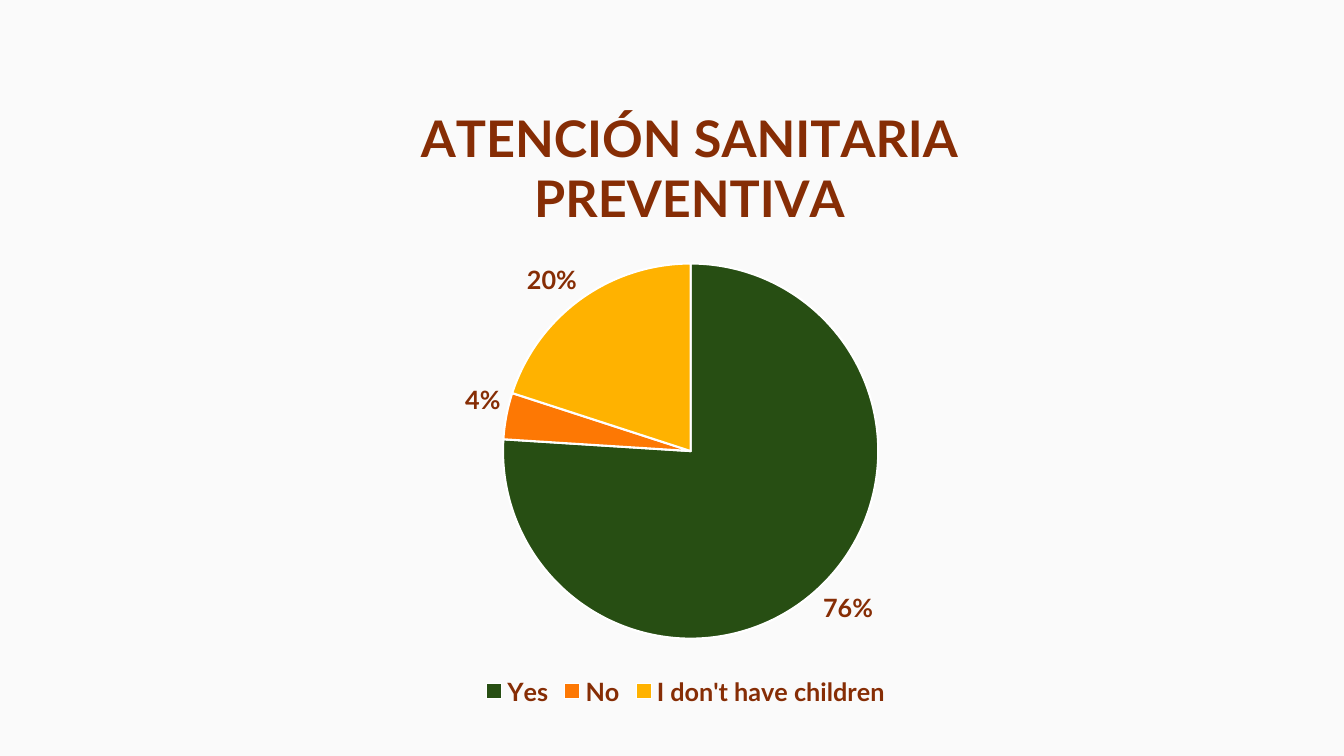
"""Build a slide with a pie chart on preventive health care."""
from lxml import etree
from pptx import Presentation
from pptx.chart.data import CategoryChartData
from pptx.dml.color import RGBColor
from pptx.enum import chart as ch
from pptx.oxml import ns
from pptx.util import Inches, Pt

COLORS = {"background": "FAFAFA", "text": "862D05", "border": "FFFFFF"}
HEADING = "ATENCIÓN SANITARIA PREVENTIVA"
ANSWERS = [
    ("Yes", 0.76, "274E13"),
    ("No", 0.04, "FD7804"),
    ("I don't have children", 0.2, "FFB200"),
]
FRAME = (1.77, 0.6, 10.06, 6.46)
HEADING_AT = {"x": 0.23, "y": 0.05}
PIE_AT = {"x": 0.32, "y": 0.31, "w": 0.37, "h": 0.58}


def rgb(value):
    return RGBColor.from_string(value)


def style(font, size, name="Lato", bold=True):
    for key, value in {"size": Pt(size), "name": name, "bold": bold}.items():
        setattr(font, key, value)
    font.color.rgb = rgb(COLORS["text"])


def place(part, before, position, target=None):
    for old in part.findall(ns.qn("c:layout")):
        part.remove(old)
    layout = etree.Element(ns.qn("c:layout"))
    manual = etree.SubElement(layout, ns.qn("c:manualLayout"))
    settings = {"layoutTarget": target} if target else {}
    settings.update(xMode="edge", yMode="edge")
    settings.update({key: str(value) for key, value in position.items()})
    for key, value in settings.items():
        etree.SubElement(manual, ns.qn(f"c:{key}")).set("val", value)
    part.find(ns.qn(f"c:{before}")).addprevious(layout)


def main():
    deck = Presentation()
    deck.slide_width, deck.slide_height = Inches(13.33), Inches(7.5)
    slide = deck.slides.add_slide(deck.slide_layouts[6])
    slide.background.fill.solid()
    slide.background.fill.fore_color.rgb = rgb(COLORS["background"])

    names, shares, fills = zip(*ANSWERS)
    answers = CategoryChartData(number_format="0%")
    answers.categories = names
    answers.add_series("Series 1", shares)
    pie = slide.shapes.add_chart(
        ch.XL_CHART_TYPE.PIE, *map(Inches, FRAME), answers).chart
    style(pie.font, 10, "Arial", False)

    pie.has_title = True
    heading = pie.chart_title.text_frame
    heading.text = HEADING
    style(heading.paragraphs[0].runs[0].font, 36)
    place(pie.chart_title._element, "overlay", HEADING_AT)

    pie.has_legend = True
    pie.legend.position = ch.XL_LEGEND_POSITION.BOTTOM
    pie.legend.include_in_layout = False
    style(pie.legend.font, 18)

    plot = pie.plots[0]
    plot.vary_by_categories = True
    place(pie._chartSpace.chart.plotArea, "pieChart", PIE_AT, "inner")
    for index, fill in enumerate(fills):
        wedge = plot.series[0].points[index].format
        wedge.fill.solid()
        wedge.fill.fore_color.rgb = rgb(fill)
        wedge.line.color.rgb = rgb(COLORS["border"])
        wedge.line.width = Pt(1.5)

    labels = plot.series[0].data_labels
    label_format = {
        "show_value": True,
        "number_format": "0%",
        "number_format_is_linked": False,
        "position": ch.XL_LABEL_POSITION.OUTSIDE_END,
    }
    for key, value in label_format.items():
        setattr(labels, key, value)
    style(labels.font, 18)
    deck.save("out.pptx")


if __name__ == "__main__":
    main()
